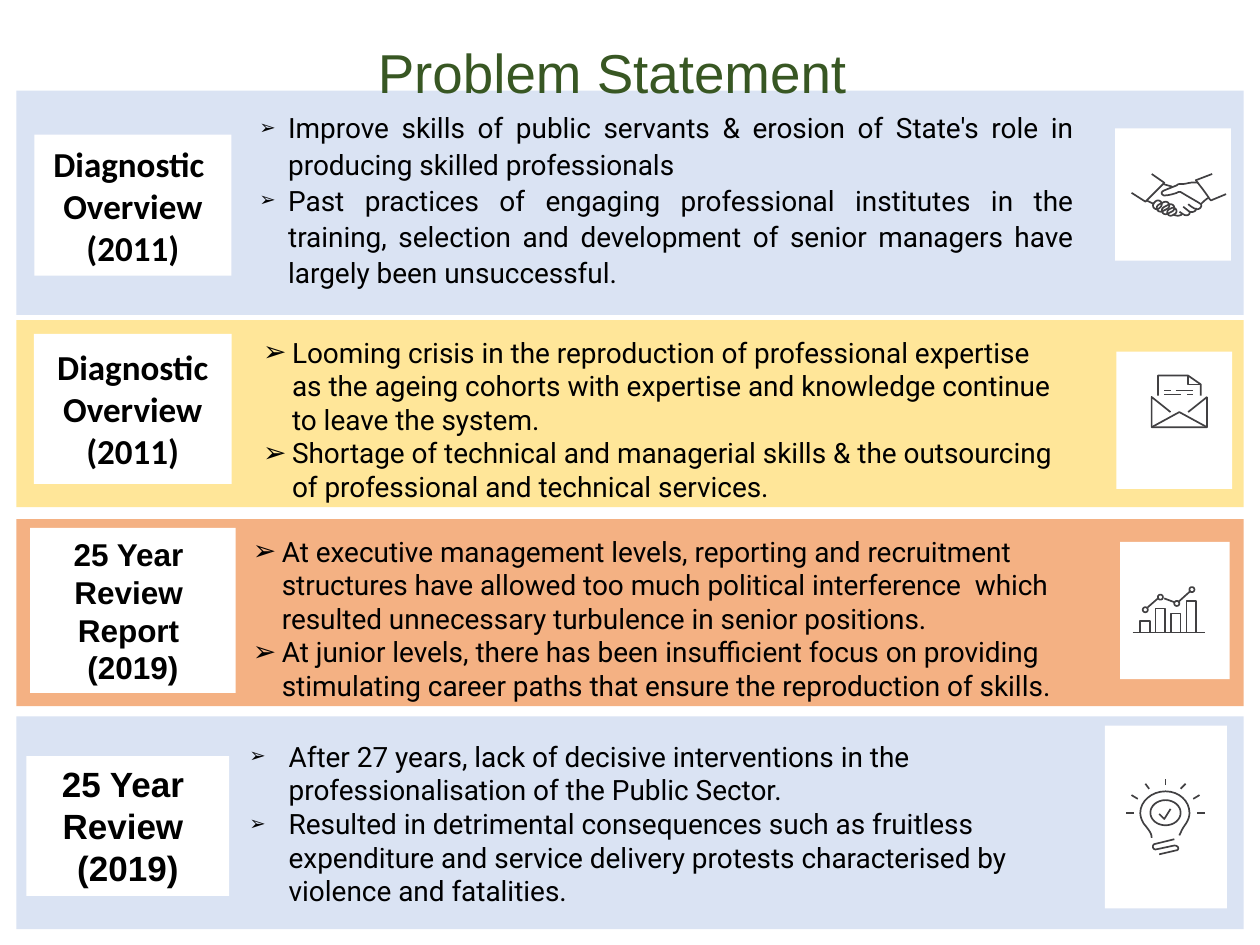
from math import atan2, cos, pi, sin

from lxml import etree
from pptx import Presentation
from pptx.dml.color import RGBColor
from pptx.enum.shapes import MSO_SHAPE
from pptx.enum.text import MSO_ANCHOR, PP_ALIGN
from pptx.oxml.ns import qn
from pptx.util import Pt

RECTANGLE = MSO_SHAPE.RECTANGLE
MIDDLE, TOP = MSO_ANCHOR.MIDDLE, MSO_ANCHOR.TOP
LEFT, CENTER, JUSTIFY = PP_ALIGN.LEFT, PP_ALIGN.CENTER, PP_ALIGN.JUSTIFY

WHITE = RGBColor(0xFF, 0xFF, 0xFF)
BLACK = RGBColor(0x00, 0x00, 0x00)
BLUE = RGBColor(0xDA, 0xE3, 0xF3)
YELLOW = RGBColor(0xFF, 0xE6, 0x99)
ORANGE = RGBColor(0xF4, 0xB1, 0x83)
GREEN = RGBColor(0x38, 0x57, 0x23)
INK = RGBColor(0x41, 0x40, 0x42)

BAND_LEFT, BAND_WIDTH = 9.4, 701.2
ICON_UNIT = 0.72  # points per icon grid step


def curve(*points):
    """Sample a chain of cubic Bezier segments sharing end points."""
    sampled = [points[0]]
    for i in range(0, len(points) - 1, 3):
        a, b, c, d = points[i:i + 4]
        for step in range(1, 9):
            t = step / 8
            u = 1 - t
            sampled.append(tuple(u**3 * p + 3 * u * u * t * q + 3 * u * t * t * r + t**3 * s
                                 for p, q, r, s in zip(a, b, c, d)))
    return sampled


def ring(x, y, rx, ry):
    return [(x + rx * cos(k * pi / 16), y + ry * sin(k * pi / 16)) for k in range(33)]


def pill(x1, y1, x2, y2, r):
    """Outline of a finger: two half circles joined by straight sides."""
    turn = atan2(y2 - y1, x2 - x1)
    outline = []
    for x, y, start in ((x2, y2, turn - pi / 2), (x1, y1, turn + pi / 2)):
        outline += [(x + r * cos(start + k * pi / 8), y + r * sin(start + k * pi / 8))
                    for k in range(9)]
    return outline + outline[:1]


def bar(left, top):
    return [(left, 36), (left, top), (left + 7.5, top), (left + 7.5, 36)]


HANDSHAKE = [
    pill(20, 25, 21, 24, 3), pill(23, 27, 27, 25, 3), pill(27, 29, 31, 27, 3),
    pill(31, 30.5, 33, 29.5, 2.7),
    curve((45, 24), (46, 25), (50, 28), (52, 28), (55, 28), (56, 25), (55, 24)),
    [(41, 26)] + curve((46, 30), (49, 31), (52, 29), (51, 27)),
    [(38, 30)] + curve((41, 32), (44, 34), (47, 32), (46, 30)),
    curve((33, 32), (36, 34), (39, 33), (40, 32)),
    [(64, 0), (51, 5)] + curve((51, 5), (54, 9), (59, 15), (62, 20)) + [(63, 21), (75, 16)],
    curve((53, 7), (47, 6), (44, 8), (40, 8), (37, 8), (37, 8), (36, 9))
    + curve((26, 13), (21, 15), (26, 18), (27, 17), (29, 17), (33, 16), (36, 15),
            (37, 14), (39, 14), (40, 15), (45, 18), (54, 23), (55, 24)),
    curve((61, 19), (59, 20), (57, 22), (55, 24)),
    [(0, 15), (11, 22), (26, 7), (16, 0)],
    [(12, 21), (18, 24)], [(32, 10), (25, 8)],
]
LETTER = [
    [(44, 17), (44, 41), (0, 41), (0, 17), (15, 29)], [(44, 41), (22, 29), (0, 41)],
    [(44, 17), (29, 29)], [(39, 16), (39, 7), (29, 0), (5, 0), (5, 16)],
    [(29, 0), (29, 7), (39, 7)],
    [(10, 12), (15, 12)], [(19, 12), (33, 12)], [(10, 15), (23, 15)], [(28, 15), (33, 15)],
]
TREND = [(10, 18), (22, 8), (35, 13), (47, 2)]
CHART = ([[(0, 36), (57, 36)]]
         + [bar(6 + 12.2 * i, top) for i, top in enumerate((27, 17, 21, 11))]
         + [ring(x, y, 2, 2) for x, y in TREND]
         + [[(12, 16), (20, 9)], [(25, 9), (33, 12)], [(36, 12), (46, 3)]])
BULB = [
    curve((20, 47), (20, 44), (19, 42), (14, 36), (12, 33), (11, 30), (11, 27),
          (11, 18), (20, 10), (31, 10), (42, 10), (50, 18), (50, 27),
          (50, 30), (49, 33), (47, 36), (44, 40), (43, 43), (42, 45)),
    ring(31, 27, 12, 10), [(26, 28), (30, 32), (35, 24)],
    [(31, 5), (31, 0)], [(18, 8), (15, 4)], [(4, 13), (9, 16)], [(0, 27), (6, 27)],
    [(47, 4), (43, 8)], [(58, 13), (53, 16)], [(56, 27), (62, 27)],
    [(38, 48)] + curve((22, 52), (20, 53), (21, 57), (24, 56))
    + curve((38, 53), (42, 53), (42, 57), (39, 57)) + [(26, 60)],
]

# band (top, height, colour), label (box, lines, font, size),
# points (box, alignment, indent, line spacing, bullet %, texts), card box, icon (left, top, strokes)
SECTIONS = [
    ((51.8, 128.2, BLUE),
     ((19.7, 77, 112.5, 80.6), ["Diagnostic ", "Overview", "(2011)"], "Calibri", 20),
     ((141.1, 58.3, 479.5, 110.2), JUSTIFY, 16.5, 1.08, 70,
      ["Improve skills of public servants & erosion of State's role in producing skilled "
       "professionals",
       "Past practices of engaging professional institutes in the training, selection and "
       "development of senior managers have largely been unsuccessful."]),
     (637.2, 73.4, 66.2, 75.6), (646.6, 99.4, HANDSHAKE)),
    ((182.9, 106.9, YELLOW),
     ((19.4, 190.8, 113, 85.7), ["Diagnostic Overview (2011)"], "Calibri", 20),
     ((143.3, 187.9, 471.6, 104.4), LEFT, 16.5, 1, 100,
      ["Looming crisis in the reproduction of professional expertise as the ageing cohorts "
       "with expertise and knowledge continue to leave the system.",
       "Shortage of technical and managerial skills & the outsourcing of professional and "
       "technical services."]),
     (637.9, 200.9, 66.2, 78.5), (658.1, 214.6, LETTER)),
    ((296.6, 106.9, ORANGE),
     ((17.3, 301.7, 117.4, 94.3), ["25 Year ", "Review ", "Report ", "(2019)"], "Arial", 18),
     ((137.5, 301.7, 485.3, 104.4), LEFT, 16.5, 1, 100,
      ["At executive management levels, reporting and recruitment structures have allowed too "
       "much political interference  which resulted unnecessary turbulence in senior positions.",
       "At junior levels, there has been insufficient focus on providing stimulating career "
       "paths that ensure the reproduction of skills."]),
     (640.1, 309.6, 62.6, 78.5), (647.3, 335.5, CHART)),
    ((409.3, 121.7, BLUE),
     ((15.1, 432, 115.9, 79.9), ["25 Year ", "Review ", "(2019)"], "Arial", 20),
     ((135.4, 419, 492.5, 104.4), LEFT, 22.5, 1, 70,
      ["After 27 years, lack of decisive interventions in the professionalisation of the "
       "Public Sector.",
       "Resulted in detrimental consequences such as fruitless expenditure and service "
       "delivery protests characterised by violence and fatalities."]),
     (631.4, 414.7, 69.8, 104.4), (643.7, 445, BULB)),
]


class Deck:
    def __init__(self, width, height):
        self.file = Presentation()
        self.file.slide_width, self.file.slide_height = Pt(width), Pt(height)
        self.slide = self.file.slides.add_slide(self.file.slide_layouts[6])

    def panel(self, box, color):
        panel = self.slide.shapes.add_shape(RECTANGLE, *map(Pt, box))
        panel.shadow.inherit = False
        panel.fill.solid()
        panel.fill.fore_color.rgb = color
        panel.line.fill.background()
        return panel

    def set_lines(self, frame, lines, font, size, align, color=BLACK, bold=False, anchor=TOP):
        frame.word_wrap = True
        frame.vertical_anchor = anchor
        for i, line in enumerate(lines):
            paragraph = frame.paragraphs[0] if i == 0 else frame.add_paragraph()
            paragraph.text = line
            paragraph.alignment = align
            style = paragraph.font
            style.name, style.size, style.bold = font, Pt(size), bold
            style.color.rgb = color
        return frame.paragraphs

    def label(self, box, lines, font, size):
        frame = self.panel(box, WHITE).text_frame
        self.set_lines(frame, lines, font, size, CENTER, bold=True, anchor=MIDDLE)

    def points(self, box, align, indent, spacing, bullet_percent, texts):
        frame = self.slide.shapes.add_textbox(*map(Pt, box)).text_frame
        for paragraph in self.set_lines(frame, texts, "Roboto", 16, align):
            paragraph.line_spacing = spacing
            props = paragraph._p.get_or_add_pPr()
            props.set("marL", str(Pt(indent)))
            props.set("indent", str(-Pt(indent)))
            defaults = props.find(qn("a:defRPr"))
            for tag, name, value in (("a:buSzPct", "val", str(bullet_percent * 1000)),
                                     ("a:buFont", "typeface", "Arial"),
                                     ("a:buChar", "char", "➢")):
                bullet = etree.Element(qn(tag))
                bullet.set(name, value)
                defaults.addprevious(bullet)

    def icon(self, left, top, strokes):
        """Draw strokes, given on the icon grid, as one unfilled outline."""
        scaled = [[(x * ICON_UNIT * 100, y * ICON_UNIT * 100) for x, y in stroke]
                  for stroke in strokes]
        builder = self.slide.shapes.build_freeform(*scaled[0][0], scale=Pt(0.01))
        for stroke in scaled:
            builder.move_to(*stroke[0])
            builder.add_line_segments(stroke[1:], close=False)
        drawing = builder.convert_to_shape(Pt(left), Pt(top))
        drawing.shadow.inherit = False
        drawing.fill.background()
        drawing.line.color.rgb = INK
        drawing.line.width = Pt(0.96)

    def title(self, box, text):
        frame = self.slide.shapes.add_textbox(*map(Pt, box)).text_frame
        heading = self.set_lines(frame, [text], "Arial", 54, CENTER, GREEN)[0]
        heading.space_before = Pt(4.5)
        heading.runs[0]._r.get_or_add_rPr().set("baseline", "30000")


def main():
    deck = Deck(720, 540)
    for (top, height, color), label, points, card, icon in SECTIONS:
        deck.panel((BAND_LEFT, top, BAND_WIDTH, height), color)
        deck.label(*label)
        deck.points(*points)
        deck.panel(card, WHITE)
        deck.icon(*icon)
    deck.title((68.4, 12.2, 563, 51.1), "Problem Statement")
    deck.file.save("out.pptx")


if __name__ == "__main__":
    main()
